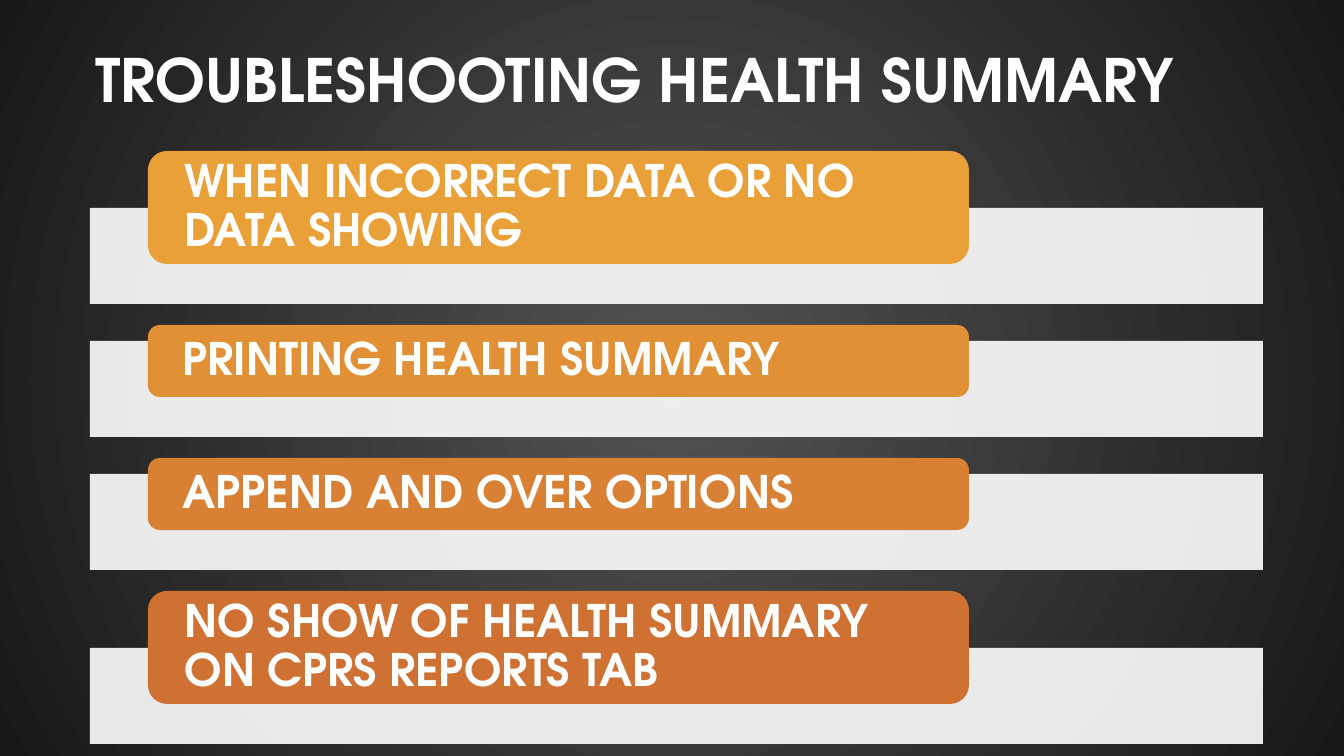
from dataclasses import dataclass

from lxml.etree import SubElement
from pptx import Presentation
from pptx.dml.color import RGBColor
from pptx.enum.shapes import MSO_SHAPE as Shape
from pptx.enum.text import MSO_ANCHOR as Anchor, PP_ALIGN as Align
from pptx.oxml import parse_xml
from pptx.oxml.ns import nsdecls, qn
from pptx.util import Pt

EMU_PER_PX = 914400 / 134.4


@dataclass(frozen=True)
class Theme:
    font: str = "TeX Gyre Adventor"
    title_size: int = 32
    label_size: int = 24
    text: str = "FFFFFF"
    bar: str = "FFFFFF"
    bar_opacity: int = 90
    glow: str = "535353"
    edge: str = "181818"


THEME = Theme()

# Label text, label height, label colour
TOPICS = [
    ("WHEN INCORRECT DATA OR NO DATA SHOWING", 113, "E9A039"),
    ("PRINTING HEALTH SUMMARY", 72, "E19036"),
    ("APPEND AND OVER OPTIONS", 72, "D88034"),
    ("NO SHOW OF HEALTH SUMMARY ON CPRS REPORTS TAB", 113, "CF7133"),
]
FIRST_TOP = 151
OVERLAP = 56
BAR_HEIGHT = 96
ROW_GAP = 21


def px(length):
    return round(length * EMU_PER_PX)


def color(code):
    return RGBColor.from_string(code)


def paint_background(page):
    """Fill the page with a radial gradient, lightest in the centre."""
    fill = page.background.fill
    fill.gradient()
    for stop, code in zip(fill.gradient_stops, (THEME.glow, THEME.edge)):
        stop.color.rgb = color(code)
    gradient = page.element.find(".//" + qn("a:gradFill"))
    gradient.replace(gradient.find(qn("a:lin")), parse_xml(
        f'<a:path {nsdecls("a")} path="circle">'
        '<a:fillToRect l="50000" t="50000" r="50000" b="50000"/></a:path>'))


def add_span(para, text, size):
    span = para.add_run()
    span.text = text
    font = span.font
    font.name, font.size, font.bold = THEME.font, Pt(size), True
    font.color.rgb = color(THEME.text)
    return span


def add_title(page, text):
    title = page.shapes.title
    title.left, title.top, title.width, title.height = map(px, (82, -26, 1173, 210))
    frame = title.text_frame
    frame.word_wrap = True
    frame.vertical_anchor = Anchor.MIDDLE
    para = frame.paragraphs[0]
    para.alignment = Align.LEFT
    span = add_span(para, text, THEME.title_size)
    span.font.fill._xPr.find(qn("a:solidFill")).addnext(parse_xml(
        f'<a:effectLst {nsdecls("a")}>'
        '<a:outerShdw blurRad="50800" dist="38100" dir="2700000">'
        '<a:srgbClr val="000000"><a:alpha val="40000"/></a:srgbClr>'
        '</a:outerShdw></a:effectLst>'))


def add_block(group, kind, left, top, width, height, code):
    block = group.shapes.add_shape(kind, *map(px, (left, top, width, height)))
    block.shadow.inherit = False
    block.fill.solid()
    block.fill.fore_color.rgb = color(code)
    block.line.fill.background()
    return block


def add_bar(group, top):
    bar = add_block(group, Shape.RECTANGLE, 90, top, 1173, BAR_HEIGHT, THEME.bar)
    tint = bar.element.spPr.find(qn("a:solidFill"))[0]
    SubElement(tint, qn("a:alpha"), val=str(THEME.bar_opacity * 1000))


def add_label(group, top, height, text, code):
    label = add_block(group, Shape.ROUNDED_RECTANGLE, 148, top, 821, height, code)
    frame = label.text_frame
    frame.word_wrap = True
    frame.vertical_anchor = Anchor.MIDDLE
    frame.margin_left = frame.margin_right = px(31)
    frame.margin_top = frame.margin_bottom = 0
    para = frame.paragraphs[0]
    para.alignment = Align.LEFT
    para.line_spacing = 0.9
    para.space_after = Pt(8.4)
    add_span(para, text, THEME.label_size)


def add_topics(page):
    """Stack the topics, each label overlapping the top of its bar."""
    group = page.shapes.add_group_shape()
    top = FIRST_TOP
    for text, height, code in TOPICS:
        bar_top = top + height - OVERLAP
        add_bar(group, bar_top)
        add_label(group, top, height, text, code)
        top = bar_top + BAR_HEIGHT + ROW_GAP


def main():
    deck = Presentation()
    deck.slide_width, deck.slide_height = px(1344), px(756)
    page = deck.slides.add_slide(deck.slide_layouts[5])
    paint_background(page)
    add_title(page, "TROUBLESHOOTING HEALTH SUMMARY")
    add_topics(page)
    deck.save("out.pptx")


if __name__ == "__main__":
    main()
